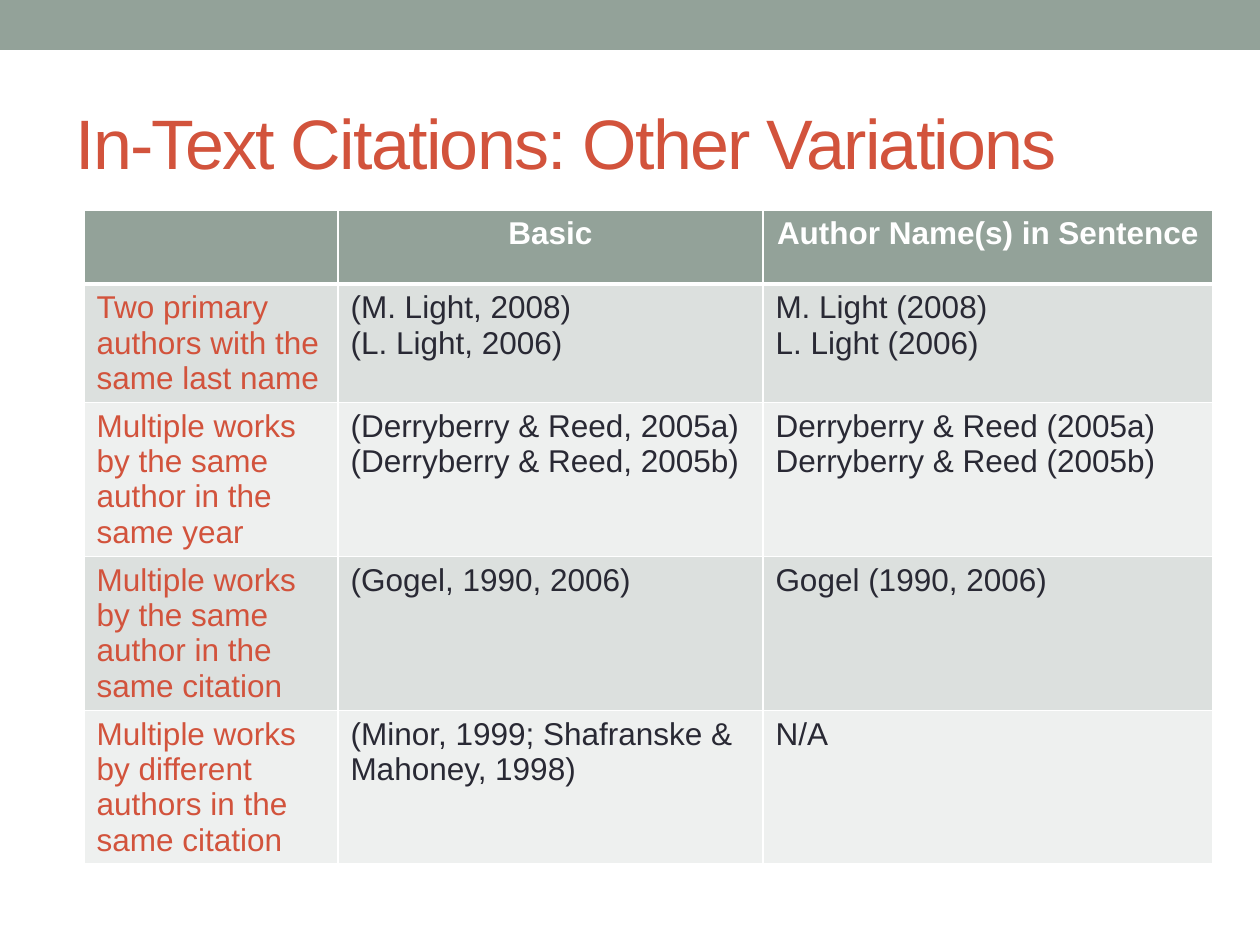
"""Build a slide with a table of in-text citation variations."""
import pptx
import pptx.util
import pptx.dml.color
import pptx.enum.shapes
import pptx.enum.text
import pptx.oxml
import pptx.oxml.ns

RGBColor = pptx.dml.color.RGBColor
SAGE = RGBColor(0x93, 0xA2, 0x99)
RUST = RGBColor(0xD2, 0x53, 0x3C)
INK = RGBColor(0x29, 0x29, 0x34)
WHITE = RGBColor(0xFF, 0xFF, 0xFF)
BANDS = [RGBColor(0xDC, 0xE0, 0xDE), RGBColor(0xEE, 0xF0, 0xEF)]
PX = 914400 // 126
ALIGN = pptx.enum.text.PP_ALIGN


def write(tf, text, color, size, bold=False, align=ALIGN.LEFT):
    tf.text = text
    for p in tf.paragraphs:
        p.alignment = align
        for r in p.runs:
            r.font.color.rgb = color
            fmt = {"name": "Arial", "size": pptx.util.Pt(size), "bold": bold}
            for key, value in fmt.items():
                setattr(r.font, key, value)


def add_border(cell, side, width):
    cell._tc.get_or_add_tcPr().append(pptx.oxml.parse_xml(
        f'<a:{side} {pptx.oxml.ns.nsdecls("a")} w="{pptx.util.Pt(width)}">'
        f'<a:solidFill><a:srgbClr val="{WHITE}"/></a:solidFill></a:{side}>'))


prs = pptx.Presentation()
prs.slide_width = 1260 * PX
prs.slide_height = 945 * PX
s = prs.slides.add_slide(prs.slide_layouts[5])

bar = s.shapes.add_shape(pptx.enum.shapes.MSO_SHAPE.RECTANGLE, 0, 0, 1260 * PX, 50 * PX)
bar.shadow.inherit = False
bar.fill.solid()
bar.fill.fore_color.rgb = SAGE
bar.line.fill.background()

title = s.shapes.title
box = {"left": 63, "top": 73, "width": 1134, "height": 136}
for key, value in box.items():
    setattr(title, key, value * PX)
tf = title.text_frame
tf.vertical_anchor = pptx.enum.text.MSO_ANCHOR.MIDDLE
write(tf, "In-Text Citations: Other Variations", RUST, 40)
tf.paragraphs[0].runs[0].font._element.set("spc", "-100")

rows = [
    ["", "Basic", "Author Name(s) in Sentence"],
    ["Two primary authors with the same last name",
     "(M. Light, 2008)\n(L. Light, 2006)",
     "M. Light (2008)\nL. Light (2006)"],
    ["Multiple works by the same author in the same year",
     "(Derryberry & Reed, 2005a)\n(Derryberry & Reed, 2005b)",
     "Derryberry & Reed (2005a)\nDerryberry & Reed (2005b)"],
    ["Multiple works by the same author in the same citation",
     "(Gogel, 1990, 2006)", "Gogel (1990, 2006)"],
    ["Multiple works by different authors in the same citation",
     "(Minor, 1999; Shafranske & Mahoney, 1998)", "N/A"],
]
widths = [254, 425, 450]
heights = [74, 118, 154, 154, 153]
table = s.shapes.add_table(len(rows), len(widths), 84 * PX, 210 * PX,
                           sum(widths) * PX, sum(heights) * PX).table
for col, width in zip(table.columns, widths):
    col.width = width * PX
for row, height in zip(table.rows, heights):
    row.height = height * PX

for i, texts in enumerate(rows):
    header = i == 0
    borders = {"lnL": 1, "lnR": 1, "lnT": 3 if i == 1 else 1, "lnB": 3 if header else 1}
    for j, text in enumerate(texts):
        cell = table.cell(i, j)
        for side, width in borders.items():
            add_border(cell, side, width)
        cell.fill.solid()
        cell.fill.fore_color.rgb = SAGE if header else BANDS[(i - 1) % 2]
        color = WHITE if header else RUST if j == 0 else INK
        write(cell.text_frame, text, color, 18, header,
              ALIGN.CENTER if header else ALIGN.LEFT)

prs.save("out.pptx")
